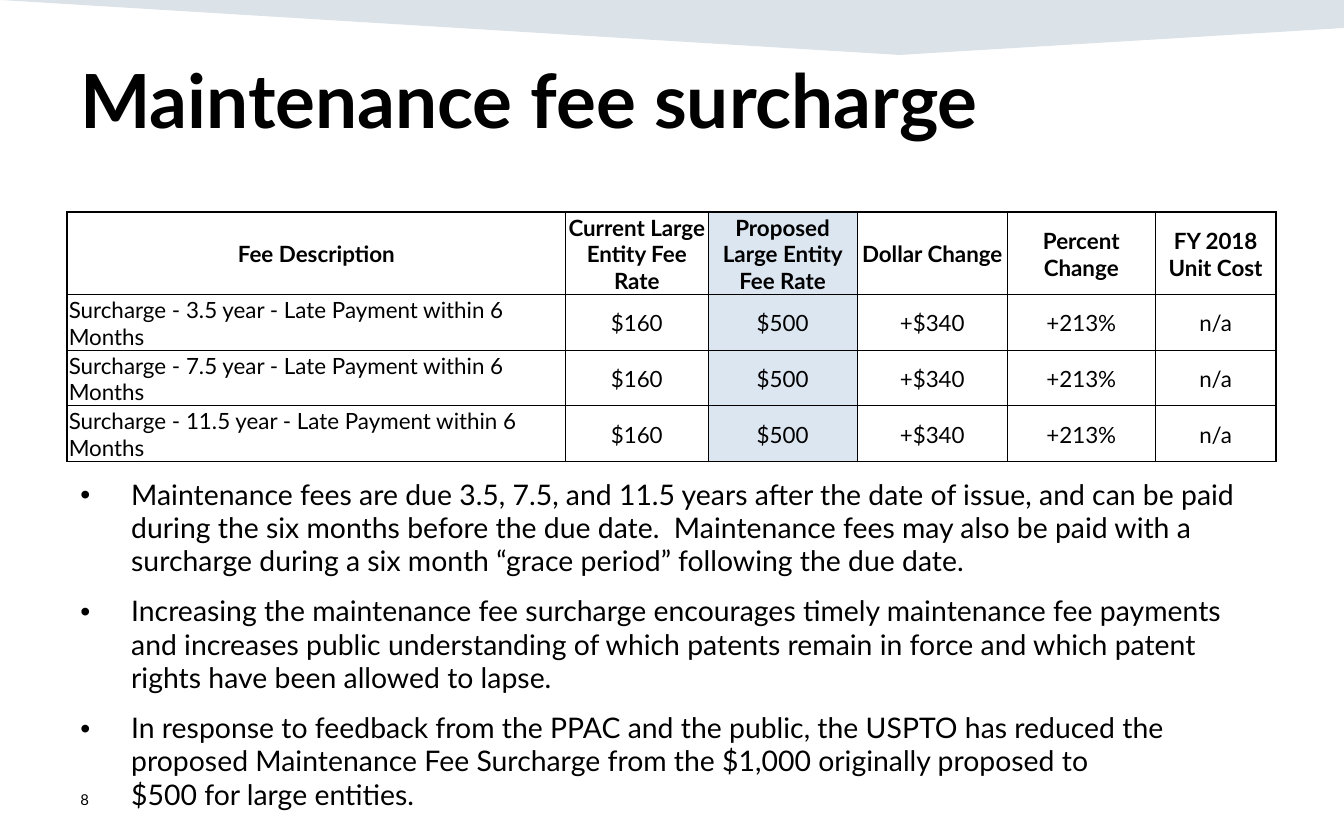
from lxml import etree
from pptx import Presentation
from pptx import util as u
from pptx.dml.color import RGBColor
from pptx.enum import text
from pptx.oxml import ns

COLORS = {"ink": "000000", "paper": "FFFFFF", "band": "164469", "proposed": "DCE6F1"}
FONT = "Lato"


def add_run(p, words, size, bold=False):
    r = p.add_run()
    r.text = words
    r.font.name = FONT
    r.font.size = u.Pt(size)
    r.font.bold = bold
    r.font.color.rgb = RGBColor.from_string(COLORS["ink"])


def add_box(left, top, width, height, anchor=text.MSO_ANCHOR.TOP):
    tf = s.shapes.add_textbox(u.Cm(left), u.Cm(top), u.Cm(width), u.Cm(height)).text_frame
    tf.word_wrap = True
    tf.vertical_anchor = anchor
    return tf


prs = Presentation()
prs.slide_width, prs.slide_height = u.Cm(25.4), u.Cm(15.88)
s = prs.slides.add_slide(prs.slide_layouts[6])

fb = s.shapes.build_freeform(0, 0)
fb.add_line_segments([(u.Cm(x), u.Cm(y)) for x, y in [(25.4, 0), (25.4, 0.53), (17, 1.04)]])
band = fb.convert_to_shape()
band.shadow.inherit = False
band.line.fill.background()
band.fill.solid()
band.fill.fore_color.rgb = RGBColor.from_string(COLORS["band"])
tint = band.fill._xPr.find(".//" + ns.qn("a:srgbClr"))
etree.SubElement(tint, ns.qn("a:alpha"), val="15000")

tf = add_box(1.27, 0.9, 22.86, 2.6)
add_run(tf.paragraphs[0], "Maintenance fee surcharge", 40, True)

bullets = [
    ["Maintenance fees are due 3.5, 7.5, and 11.5 years after the date of issue, and can be paid during the six months before the due date.  Maintenance fees may also be paid with a surcharge during a six month “grace period” following the due date."],
    ["Increasing the maintenance fee surcharge encourages timely maintenance fee payments and increases public understanding of which patents remain in force and which patent rights have been allowed to lapse."],
    ["In response to feedback from the PPAC and the public, the USPTO has reduced the proposed Maintenance Fee Surcharge from the $1,000 originally proposed to ",
     "$500 for large entities."],
]
tf = add_box(1.27, 8.92, 22.86, 5.64)
for i, lines in enumerate(bullets):
    p = tf.paragraphs[0] if i == 0 else tf.add_paragraph()
    pPr = p._p.get_or_add_pPr()
    pPr.set("marL", str(u.Cm(0.96)))
    pPr.set("indent", str(-u.Cm(0.96)))
    etree.SubElement(pPr, ns.qn("a:buFont"), typeface="Arial")
    etree.SubElement(pPr, ns.qn("a:buChar"), char="•")
    p.line_spacing = 0.98
    if i:
        p.space_before = u.Pt(9)
    for j, line in enumerate(lines):
        if j:
            p.add_line_break()
        add_run(p, line, 15.2)

tf = add_box(1.27, 14.7, 5.72, 0.84, text.MSO_ANCHOR.MIDDLE)
add_run(tf.paragraphs[0], "8", 8)

rows = [["Fee Description", "Current Large Entity Fee Rate", "Proposed Large Entity Fee Rate",
         "Dollar Change", "Percent Change", "FY 2018 Unit Cost"]]
for year in ["3.5", "7.5", "11.5"]:
    rows.append([f"Surcharge - {year} year - Late Payment within 6 Months",
                 "$160", "$500", "+$340", "+213%", "n/a"])
widths = [9.42, 2.69, 2.82, 2.84, 2.79, 2.29]
heights = [1.56, 1.05, 1.05, 1.05]
table = s.shapes.add_table(len(rows), len(widths), u.Cm(1.27), u.Cm(4.01),
                           u.Cm(sum(widths)), u.Cm(sum(heights))).table
table.first_row = table.horz_banding = False
for col, width in zip(table.columns, widths):
    col.width = u.Cm(width)
for row, height in zip(table.rows, heights):
    row.height = u.Cm(height)

for i, row in enumerate(rows):
    for j, words in enumerate(row):
        cell = table.cell(i, j)
        cell.margin_left = cell.margin_right = cell.margin_top = u.Cm(0.03)
        cell.margin_bottom = 0
        cell.vertical_anchor = text.MSO_ANCHOR.MIDDLE
        tcPr = cell._tc.get_or_add_tcPr()
        outer = {"lnL": j == 0, "lnR": j == len(widths) - 1, "lnT": i == 0, "lnB": False}
        for side, heavy in outer.items():
            ln = etree.SubElement(tcPr, ns.qn("a:" + side), w=str(u.Pt(1 if heavy else 0.5)))
            fill = etree.SubElement(ln, ns.qn("a:solidFill"))
            etree.SubElement(fill, ns.qn("a:srgbClr"), val=COLORS["ink"])
        cell.fill.solid()
        cell.fill.fore_color.rgb = RGBColor.from_string(COLORS["proposed" if j == 2 else "paper"])
        p = cell.text_frame.paragraphs[0]
        p.alignment = text.PP_ALIGN.LEFT if i and j == 0 else text.PP_ALIGN.CENTER
        add_run(p, words, 12, i == 0)

prs.save("out.pptx")
